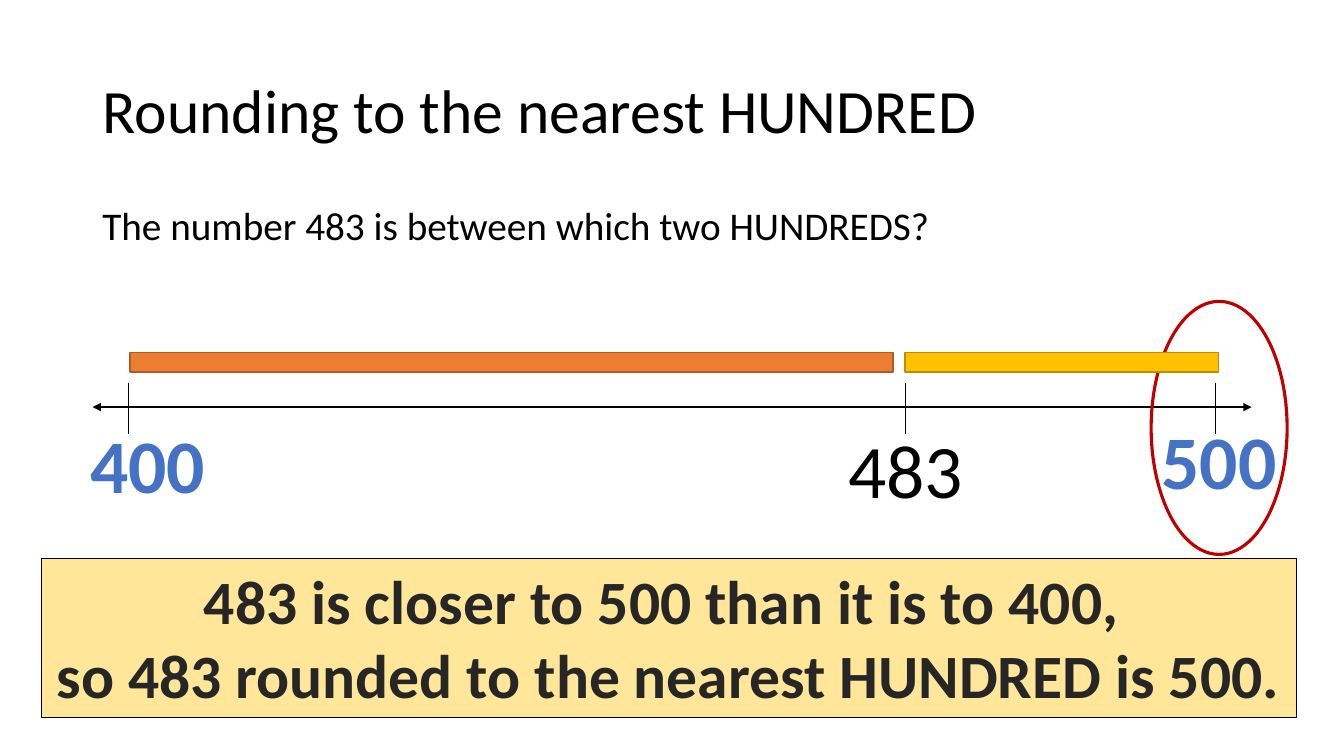
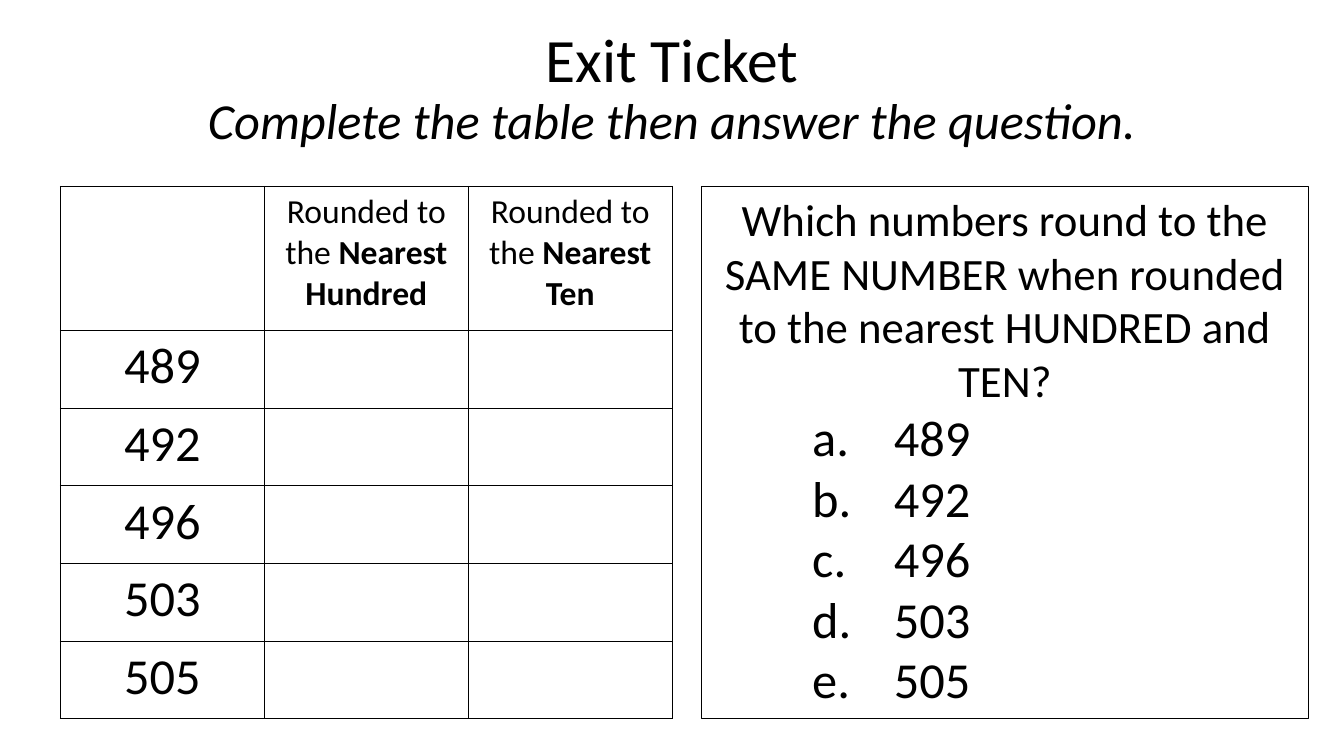
from lxml import etree
from pptx import Presentation
from pptx.dml.color import RGBColor
from pptx.enum.shapes import MSO_CONNECTOR, MSO_SHAPE
from pptx.enum.text import MSO_ANCHOR, MSO_AUTO_SIZE, PP_ALIGN
from pptx.oxml.ns import qn
from pptx.util import Inches, Pt

WIDTH, HEIGHT = Inches(13.333), Inches(7.5)
FONT = "Calibri"
COLORS = {
    "ink": "000000",
    "banner ink": "262626",
    "hundred": "4472C4",
    "ring": "C00000",
    "far": "ED7D31",
    "far edge": "AF5C24",
    "near": "FFC000",
    "near edge": "BD8E00",
    "banner": "FFE699",
}
MARGIN, CONTENT = 6.88, 86.25  # percent of the slide's width
NUMBERS = ["489", "492", "496", "503", "505"]


def color(name):
    return RGBColor.from_string(COLORS[name])


def across(percent):
    return round(WIDTH * percent / 100)


def down(percent):
    return round(HEIGHT * percent / 100)


def area(left, top, width, height):
    """Turn shares of the slide, in percent, into lengths."""
    return across(left), down(top), across(width), down(height)


def add_span(para, text, size, ink="ink", bold=False, italic=False):
    span = para.add_run()
    span.text = text
    font = span.font
    font.name, font.size = FONT, Pt(size)
    font.bold, font.italic = bold, italic
    font.color.rgb = color(ink)


def prepare_frame(shape, anchor=MSO_ANCHOR.TOP, wrap=True):
    frame = shape.text_frame
    frame.word_wrap = wrap
    frame.auto_size = MSO_AUTO_SIZE.NONE
    frame.vertical_anchor = anchor
    return frame


def add_page(deck, top, title, align, subtitle=None):
    page = deck.slides.add_slide(deck.slide_layouts[5])
    box = page.shapes.title
    box.left, box.top, box.width, box.height = area(MARGIN, top, CONTENT, 19.33)
    para = prepare_frame(box, MSO_ANCHOR.MIDDLE).paragraphs[0]
    para.alignment, para.line_spacing = align, 0.9
    add_span(para, title, 44)
    if subtitle:
        para.add_line_break()
        add_span(para, subtitle, 36, italic=True)
    return page


def add_text(page, place, text, size, align=PP_ALIGN.LEFT, wrap=True, **style):
    box = page.shapes.add_textbox(*area(*place))
    para = prepare_frame(box, wrap=wrap).paragraphs[0]
    para.alignment = align
    add_span(para, text, size, **style)
    return para


def add_figure(page, kind, place, edge, weight, fill=None):
    shape = page.shapes.add_shape(kind, *area(*place))
    shape.shadow.inherit = False
    shape.line.color.rgb = color(edge)
    shape.line.width = Pt(weight)
    if fill:
        shape.fill.solid()
        shape.fill.fore_color.rgb = color(fill)
    else:
        shape.fill.background()
    return shape


def add_line(page, start, end, weight, arrows=False):
    line = page.shapes.add_connector(
        MSO_CONNECTOR.STRAIGHT,
        across(start[0]), down(start[1]), across(end[0]), down(end[1]),
    )
    line.line.color.rgb = color("ink")
    line.line.width = Pt(weight)
    if arrows:
        outline = line.line._get_or_add_ln()
        for tip in ("a:headEnd", "a:tailEnd"):
            etree.SubElement(outline, qn(tip), type="triangle")
    etree.SubElement(line._element.spPr, qn("a:effectLst"))


def add_number_line(page):
    axis = 53.85
    add_line(page, (MARGIN, axis), (MARGIN + CONTENT, axis), 1.5, arrows=True)
    marks = [  # number, tick, label centre, label top, ink, bold
        ("483", 67.35, 67.4, 55.35, "ink", False),
        ("500", 90.45, 90.7, 54.15, "hundred", True),
        ("400", 9.55, 11, 54.65, "hundred", True),
    ]
    label_width = 10.12
    for number, tick, centre, top, ink, bold in marks:
        add_line(page, (tick, 50.6), (tick, 57.4), 0.5)
        place = (centre - label_width / 2, top, label_width, 13.47)
        add_text(page, place, number, 54, PP_ALIGN.CENTER, wrap=False,
                 ink=ink, bold=bold)
    add_figure(page, MSO_SHAPE.OVAL, (85.65, 39.87, label_width, 33.47), "ring", 2.25)
    for name, left, width in (("near", 67.35, 23.32), ("far", 9.68, 56.77)):
        add_figure(page, MSO_SHAPE.RECTANGLE, (left, 46.67, width, 2.53),
                   name + " edge", 1, name)


def add_banner(page, lines):
    banner = add_figure(page, MSO_SHAPE.RECTANGLE, (3.08, 73.87, 93.38, 21.07),
                        "ink", 0.75, "banner")
    para = prepare_frame(banner, wrap=False).paragraphs[0]
    para.alignment = PP_ALIGN.CENTER
    for index, line in enumerate(lines):
        if index:
            para.add_line_break()
        add_span(para, line, 44, "banner ink", bold=True)


def format_cell(cell):
    """Give the cell thin black borders and no fill."""
    properties = cell._tc.get_or_add_tcPr()
    for side in ("a:lnL", "a:lnR", "a:lnT", "a:lnB"):
        border = etree.SubElement(properties, qn(side), w=str(Pt(1)))
        paint = etree.SubElement(border, qn("a:solidFill"))
        etree.SubElement(paint, qn("a:srgbClr"), val=COLORS["ink"])
    cell.fill.background()


def add_rounding_table(page):
    units = ["Hundred", "Ten"]
    columns = len(units) + 1
    place = area(4.5, 24.67, 45.52, 70.4)
    table = page.shapes.add_table(len(NUMBERS) + 1, columns, *place).table
    table.first_row = table.horz_banding = False
    for column in table.columns:
        column.width = place[2] // columns
    for index, row in enumerate(table.rows):
        row.height = down(10.27 if index else 19.07)
    for cell in table.iter_cells():
        format_cell(cell)
        cell.text_frame.paragraphs[0].alignment = PP_ALIGN.CENTER
    for index, unit in enumerate(units, 1):
        para = table.cell(0, index).text_frame.paragraphs[0]
        add_span(para, "Rounded to the ", 24)
        add_span(para, "Nearest " + unit, 24, bold=True)
    for index, number in enumerate(NUMBERS, 1):
        add_span(table.cell(index, 0).text_frame.paragraphs[0], number, 36)


def add_question(page, question):
    panel = add_figure(page, MSO_SHAPE.RECTANGLE, (52.2, 24.67, 45.15, 70.4), "ink", 0.75)
    frame = prepare_frame(panel)
    frame.paragraphs[0].alignment = PP_ALIGN.CENTER
    add_span(frame.paragraphs[0], question, 32)
    for number in NUMBERS:
        para = frame.add_paragraph()
        para.level, para.alignment = 1, PP_ALIGN.LEFT
        properties = para._p.get_or_add_pPr()
        properties.set("marL", str(Inches(1.81)))
        properties.set("indent", str(Inches(-0.81)))
        etree.SubElement(properties, qn("a:buFont"), typeface="+mj-lt")
        etree.SubElement(properties, qn("a:buAutoNum"), type="alphaLcPeriod")
        add_span(para, number, 36)


def main():
    deck = Presentation()
    deck.slide_width, deck.slide_height = WIDTH, HEIGHT

    page = add_page(deck, 5.33, "Rounding to the nearest HUNDRED", PP_ALIGN.LEFT)
    para = add_text(page, (MARGIN, 26.67, CONTENT, 10),
                    "The number 483 is between which two HUNDREDS?", 28)
    para.line_spacing = 0.9
    add_number_line(page)
    add_banner(page, ["483 is closer to 500 than it is to 400, ",
                      "so 483 rounded to the nearest HUNDRED is 500."])

    page = add_page(deck, 2.27, "Exit Ticket", PP_ALIGN.CENTER,
                    "Complete the table then answer the question.")
    add_rounding_table(page)
    add_question(page, "Which numbers round to the SAME NUMBER when rounded "
                       "to the nearest HUNDRED and TEN?")

    deck.save("out.pptx")


if __name__ == "__main__":
    main()
